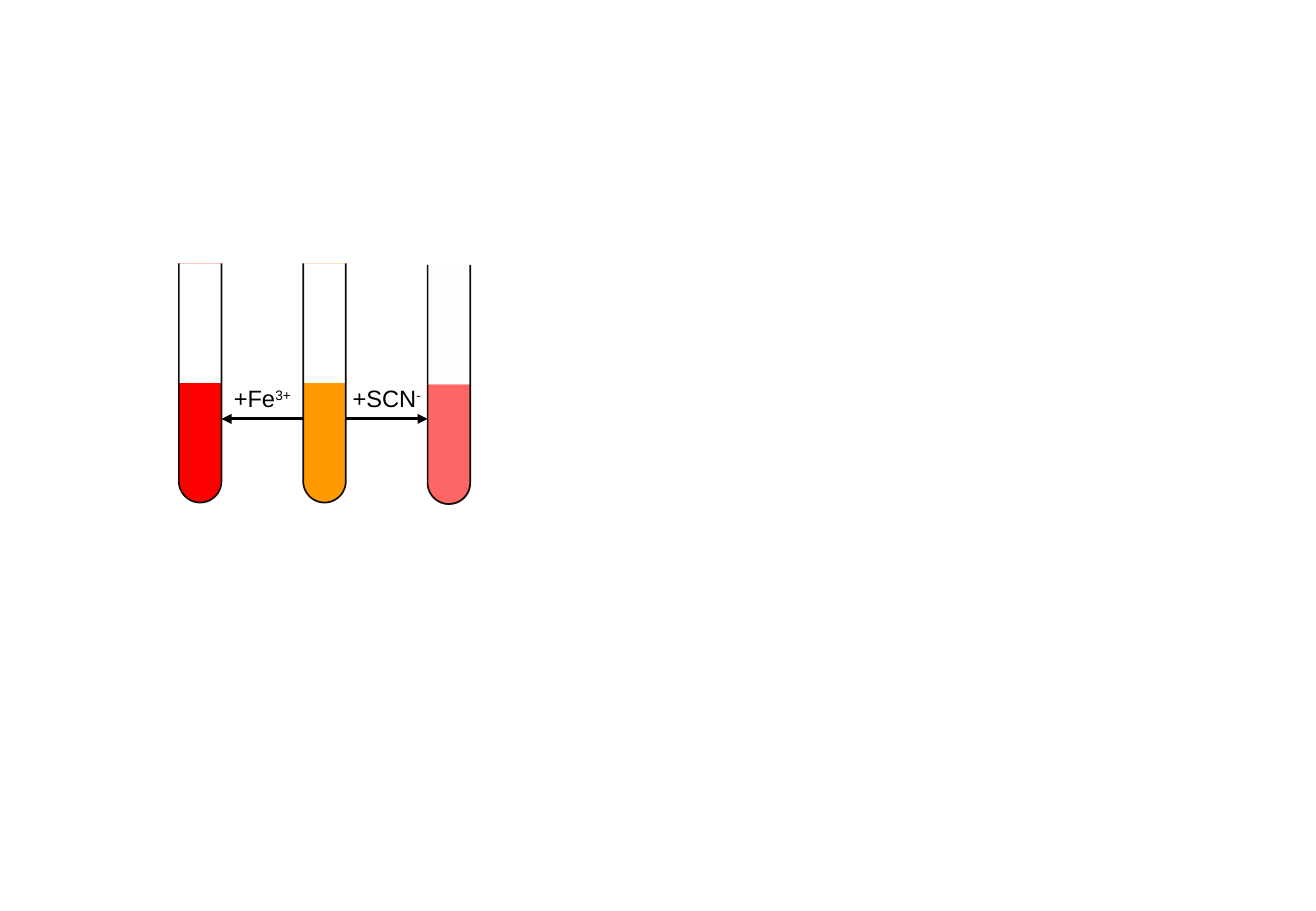
import math

import pptx
import pptx.dml.color
import pptx.enum.shapes
import pptx.enum.text
import pptx.util
from lxml import etree
from pptx.oxml.ns import qn
from pptx.util import Cm

TUBE_LEFT, TUBE_PITCH = 3.74, 2.6
TUBE_WIDTH, TUBE_HEIGHT = 0.89, 5.0
ARROW_Y = 8.76
LABEL_TOP, LABEL_HEIGHT = 7.9, 0.86
ARC_STEPS = 36


def color(hex_string):
    return pptx.dml.color.RGBColor.from_string(hex_string)


def tube_left(index):
    return TUBE_LEFT + index * TUBE_PITCH


def add_test_tube(slide, left, top, liquid, opacity=100):
    """Draw an open tube with a round bottom, filled to half its height."""
    radius = TUBE_WIDTH / 2
    center_x, center_y = left + radius, top + TUBE_HEIGHT - radius
    angles = [math.pi * step / ARC_STEPS for step in range(ARC_STEPS + 1)]
    points = [(center_x - radius * math.cos(angle), center_y + radius * math.sin(angle))
              for angle in angles]
    points.append((left + TUBE_WIDTH, top))
    builder = slide.shapes.build_freeform(Cm(left), Cm(top))
    builder.add_line_segments([(Cm(x), Cm(y)) for x, y in points], close=False)
    tube = builder.convert_to_shape()
    tube.shadow.inherit = False
    tube.line.color.rgb = color("0D0D0D")
    tube.line.width = pptx.util.Pt(1)

    tube.fill.gradient()
    tube.fill.gradient_angle = 90
    for stop, stop_color in zip(tube.fill.gradient_stops, (liquid, "FFFFFF")):
        stop.position = 0.5
        stop.color.rgb = color(stop_color)
    if opacity < 100:
        liquid_element = next(tube._element.spPr.iter(qn("a:srgbClr")))
        etree.SubElement(liquid_element, qn("a:alpha"), val=str(opacity * 1000))


def add_arrow(slide, start_x, end_x):
    arrow = slide.shapes.add_connector(
        pptx.enum.shapes.MSO_CONNECTOR.STRAIGHT,
        Cm(start_x), Cm(ARROW_Y), Cm(end_x), Cm(ARROW_Y))
    arrow.line.color.rgb = color("000000")
    arrow.line.width = pptx.util.Pt(1.75)
    etree.SubElement(arrow.line._get_or_add_ln(), qn("a:tailEnd"), type="triangle")
    etree.SubElement(arrow._element.spPr, qn("a:effectLst"))


def add_ion_label(slide, center_x, width, ion, charge):
    box = slide.shapes.add_textbox(
        Cm(center_x - width / 2), Cm(LABEL_TOP), Cm(width), Cm(LABEL_HEIGHT))
    box.text_frame.word_wrap = False
    box.text_frame.auto_size = pptx.enum.text.MSO_AUTO_SIZE.SHAPE_TO_FIT_TEXT
    paragraph = box.text_frame.paragraphs[0]
    paragraph.alignment = pptx.enum.text.PP_ALIGN.CENTER
    paragraph.font.name = "Arial"
    paragraph.font.size = pptx.util.Pt(14)
    paragraph.font.color.rgb = color("000000")
    paragraph.add_run().text = ion
    superscript = paragraph.add_run()
    superscript.text = charge
    superscript.font._element.set("baseline", "30000")


def main():
    presentation = pptx.Presentation()
    presentation.slide_width = Cm(27.51)
    presentation.slide_height = Cm(19.05)
    slide = presentation.slides.add_slide(presentation.slide_layouts[6])

    add_test_tube(slide, tube_left(0), 5.51, "FF0000")
    add_test_tube(slide, tube_left(1), 5.51, "FF9B00")
    add_test_tube(slide, tube_left(2), 5.54, "FF0000", opacity=60)

    add_arrow(slide, tube_left(1), tube_left(0) + TUBE_WIDTH)
    add_arrow(slide, tube_left(1) + TUBE_WIDTH, tube_left(2))

    gap_center = (tube_left(0) + TUBE_WIDTH + tube_left(1)) / 2
    add_ion_label(slide, gap_center + TUBE_PITCH, 1.98, "+SCN", "-")
    add_ion_label(slide, gap_center, 1.75, "+Fe", "3+")

    presentation.save("out.pptx")


if __name__ == "__main__":
    main()
